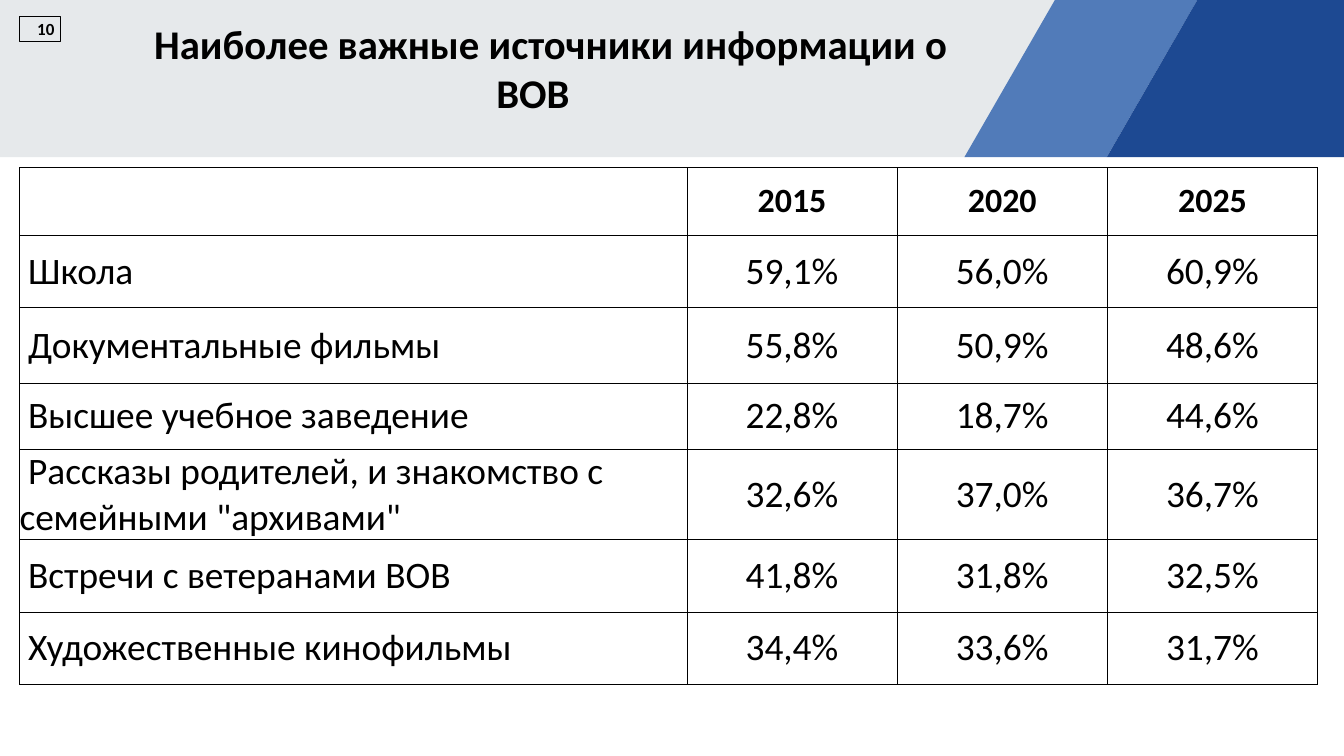
"""Builds the slide on the most important sources of information about the war."""
from lxml.etree import SubElement
from pptx import Presentation
from pptx.dml.color import RGBColor
from pptx.enum.shapes import MSO_SHAPE
from pptx.enum.text import MSO_ANCHOR as ANCHOR, PP_ALIGN as ALIGN
from pptx.oxml.ns import qn
from pptx.util import Inches, Pt


def color(hex_string):
    return RGBColor.from_string(hex_string)


def write(p, text, size, bold=False, align=ALIGN.LEFT, indent=0):
    p.alignment = align
    if indent:
        pPr = p._p.get_or_add_pPr()
        pPr.set("marL", "0")
        pPr.set("indent", str(Inches(indent)))
    r = p.add_run()
    r.text = text
    r.font.name = "Calibri"
    r.font.size = Pt(size)
    r.font.bold = bold
    r.font.color.rgb = color("000000")


prs = Presentation()
prs.slide_width, prs.slide_height = Inches(21.99), Inches(12.37)
slide = prs.slides.add_slide(prs.slide_layouts[6])
shapes = slide.shapes

BAND_HEIGHT = 2.57
header_bands = [
    ("E6E9EB", 0, 17.29, 15.81, 0),
    ("517BB9", 17.26, 19.59, 18.11, 15.78),
    ("1D4992", 19.59, 21.99, 21.99, 18.11),
]
for fill, top_left, top_right, bottom_right, bottom_left in header_bands:
    builder = shapes.build_freeform(Inches(top_left), 0)
    builder.add_line_segments([
        (Inches(top_right), 0),
        (Inches(bottom_right), Inches(BAND_HEIGHT)),
        (Inches(bottom_left), Inches(BAND_HEIGHT)),
    ])
    sp = builder.convert_to_shape()
    sp.shadow.inherit = False
    sp.fill.solid()
    sp.fill.fore_color.rgb = color(fill)
    sp.line.fill.background()

title = shapes.add_textbox(Inches(1.33), Inches(0.26), Inches(14.78), Inches(2.26))
tf = title.text_frame
tf.word_wrap = True
write(tf.paragraphs[0], "Наиболее важные источники информации о ВОВ", 48, True, ALIGN.CENTER, 0.59)

number = shapes.add_shape(MSO_SHAPE.RECTANGLE, Inches(0.32), Inches(0.26), Inches(0.67), Inches(0.42))
number.shadow.inherit = False
number.fill.background()
number.line.color.rgb = color("000000")
number.line.width = Pt(0.75)
tf = number.text_frame
tf.vertical_anchor = ANCHOR.MIDDLE
write(tf.paragraphs[0], "10", 20, True, ALIGN.RIGHT)

rows = [
    ("", "2015", "2020", "2025"),
    ("Школа", "59,1%", "56,0%", "60,9%"),
    ("Документальные фильмы", "55,8%", "50,9%", "48,6%"),
    ("Высшее учебное заведение", "22,8%", "18,7%", "44,6%"),
    ('Рассказы родителей, и знакомство с семейными "архивами"', "32,6%", "37,0%", "36,7%"),
    ("Встречи с ветеранами ВОВ", "41,8%", "31,8%", "32,5%"),
    ("Художественные кинофильмы", "34,4%", "33,6%", "31,7%"),
]
row_heights = [1.11, 1.18, 1.24, 1.08, 1.48, 1.18, 1.18]
column_widths = [10.92, 3.44, 3.44, 3.44]
table = shapes.add_table(len(rows), len(column_widths), Inches(0.32), Inches(2.74),
                         Inches(sum(column_widths)), Inches(sum(row_heights))).table
table.first_row = table.horz_banding = False
for column, width in zip(table.columns, column_widths):
    column.width = Inches(width)
for i, (values, height) in enumerate(zip(rows, row_heights)):
    table.rows[i].height = Inches(height)
    for j, value in enumerate(values):
        cell = table.cell(i, j)
        cell.vertical_anchor = ANCHOR.MIDDLE
        cell.margin_left = cell.margin_right = cell.margin_top = cell.margin_bottom = 0
        tcPr = cell._tc.get_or_add_tcPr()
        for side in ("lnL", "lnR", "lnT", "lnB"):
            ln = SubElement(tcPr, qn(f"a:{side}"), w=str(Pt(0.5)))
            SubElement(SubElement(ln, qn("a:solidFill")), qn("a:srgbClr"), val="000000")
        cell.fill.background()
        p = cell.text_frame.paragraphs[0]
        if i == 0 and value:
            write(p, value, 40, True, ALIGN.CENTER)
        elif i and j == 0:
            write(p, value, 44, indent=0.14)
        elif i:
            write(p, value, 44, align=ALIGN.CENTER)

prs.save("out.pptx")
